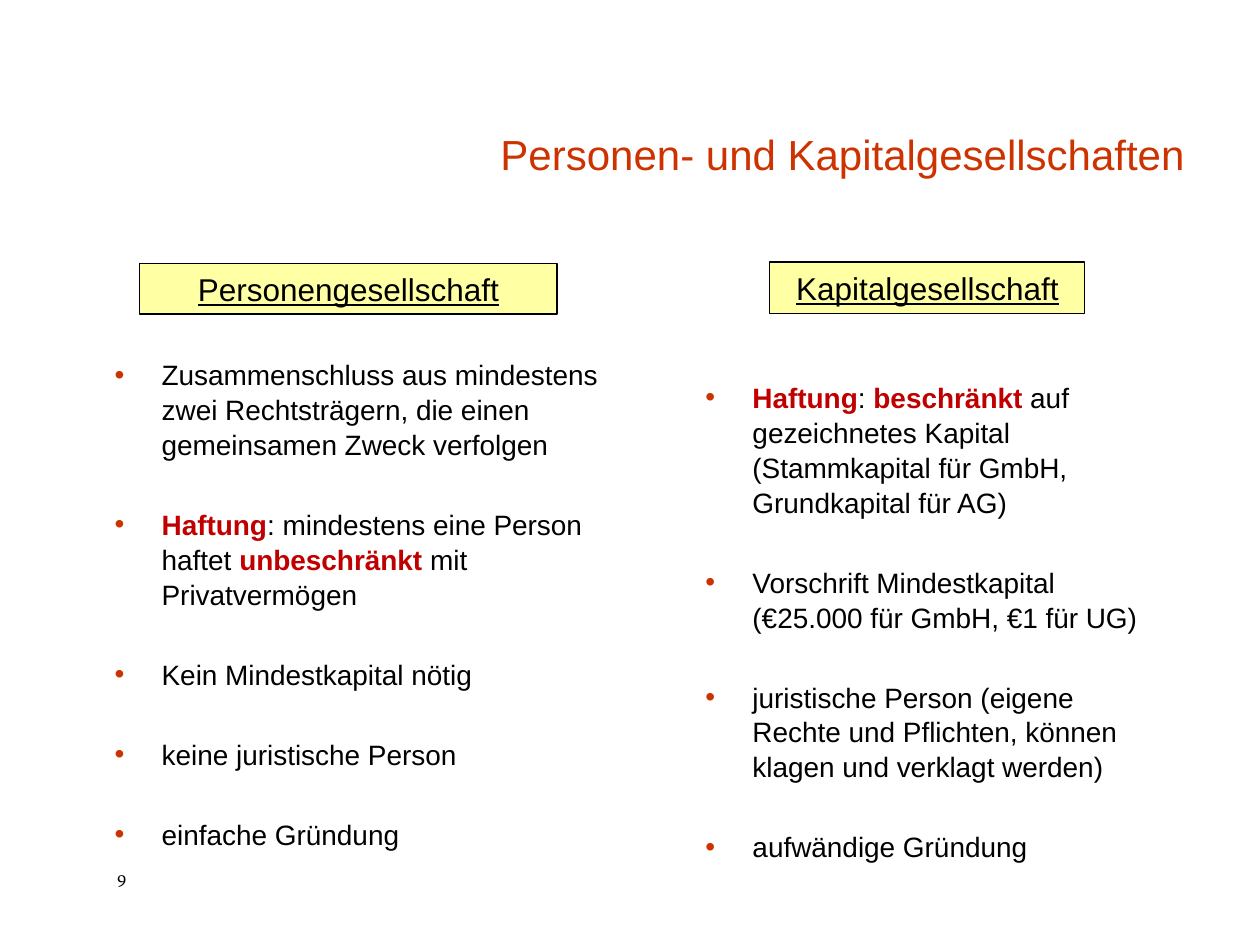
import pptx
import pptx.dml.color
import pptx.enum.shapes
import pptx.enum.text
import pptx.oxml
import pptx.oxml.ns
import pptx.util

Cm = pptx.util.Cm
Pt = pptx.util.Pt
ALIGN = pptx.enum.text.PP_ALIGN
ANCHOR = pptx.enum.text.MSO_ANCHOR

PARTNERSHIP = [
    "Zusammenschluss aus mindestens zwei Rechtsträgern, die einen gemeinsamen Zweck verfolgen",
    "*Haftung*: mindestens eine Person haftet *unbeschränkt* mit Privatvermögen",
    "Kein Mindestkapital nötig",
    "keine juristische Person",
    "einfache Gründung",
]
CORPORATION = [
    "*Haftung*: *beschränkt* auf gezeichnetes Kapital (Stammkapital für GmbH, Grundkapital für AG)",
    "Vorschrift Mindestkapital (€25.000 für GmbH, €1 für UG)",
    "juristische Person (eigene Rechte und Pflichten, können klagen und verklagt werden)",
    "aufwändige Gründung",
]


def colour(value):
    return pptx.dml.color.RGBColor.from_string(value)


class SlideBuilder:
    """Holds the style and the current slide."""

    font = "Arial"
    black = "000000"
    accent = "CC3300"
    emphasis = "C00000"
    label_fill = "FFFFA3"

    def __init__(self, slide):
        self.slide = slide

    def format_font(self, font, size, value, name=None):
        font.name = name or self.font
        font.size = Pt(size)
        font.color.rgb = colour(value)

    def text_box(self, left, top, width, height):
        box = self.slide.shapes.add_textbox(Cm(left), Cm(top), Cm(width), Cm(height))
        box.text_frame.word_wrap = True
        return box.text_frame

    def title(self, text, *area):
        frame = self.text_box(*area)
        frame.vertical_anchor = ANCHOR.BOTTOM
        frame.text = text
        paragraph = frame.paragraphs[0]
        paragraph.alignment = ALIGN.RIGHT
        paragraph.line_spacing = 0.9
        self.format_font(paragraph.runs[0].font, 24, self.accent)

    def page_number(self, text, *area):
        frame = self.text_box(*area)
        frame.text = text
        self.format_font(frame.paragraphs[0].runs[0].font, 10, self.black, "Vollkorn")

    def label(self, text, left, top, width, height):
        shape = self.slide.shapes.add_shape(
            pptx.enum.shapes.MSO_SHAPE.RECTANGLE, Cm(left), Cm(top), Cm(width), Cm(height))
        shape.shadow.inherit = False
        shape.fill.solid()
        shape.fill.fore_color.rgb = colour(self.label_fill)
        shape.line.color.rgb = colour(self.black)
        shape.line.width = Pt(0.75)
        frame = shape.text_frame
        frame.vertical_anchor = ANCHOR.MIDDLE
        frame.text = text
        paragraph = frame.paragraphs[0]
        paragraph.alignment = ALIGN.CENTER
        font = paragraph.runs[0].font
        self.format_font(font, 18, self.black)
        font.underline = True

    def add_bullet(self, paragraph):
        properties = paragraph._p.get_or_add_pPr()
        properties.set("marL", str(Cm(0.95)))
        properties.set("indent", str(-Cm(0.95)))
        namespace = pptx.oxml.ns.nsdecls("a")
        for xml in (
            f'<a:buClr {namespace}><a:srgbClr val="{self.accent}"/></a:buClr>',
            f'<a:buFont {namespace} typeface="{self.font}"/>',
            f'<a:buChar {namespace} char="•"/>',
        ):
            properties.append(pptx.oxml.parse_xml(xml))

    def bullet_list(self, items, *area):
        frame = self.text_box(*area)
        for index, item in enumerate(items):
            paragraph = frame.add_paragraph() if index else frame.paragraphs[0]
            self.add_bullet(paragraph)
            paragraph.line_spacing = 1.04
            if index:
                paragraph.space_before = Pt(25.7)
            for position, text in enumerate(item.split("*")):
                if text:
                    strong = position % 2 == 1
                    run = paragraph.add_run()
                    run.text = text
                    self.format_font(run.font, 16, self.emphasis if strong else self.black)
                    run.font.bold = strong


def main():
    presentation = pptx.Presentation()
    presentation.slide_width = Cm(25.4)
    presentation.slide_height = Cm(19.05)
    builder = SlideBuilder(presentation.slides.add_slide(presentation.slide_layouts[6]))
    builder.page_number("9", 2.11, 17.35, 1.7, 0.69)
    builder.title("Personen- und Kapitalgesellschaften", 5.31, 1.07, 18.82, 2.67)
    builder.label("Personengesellschaft", 2.82, 5.31, 8.41, 1.02)
    builder.label("Kapitalgesellschaft", 15.52, 5.28, 6.35, 1.04)
    builder.bullet_list(PARTNERSHIP, 2.06, 7.06, 11.05, 8.41)
    builder.bullet_list(CORPORATION, 13.97, 7.52, 9.6, 7.49)
    presentation.save("out.pptx")


if __name__ == "__main__":
    main()
